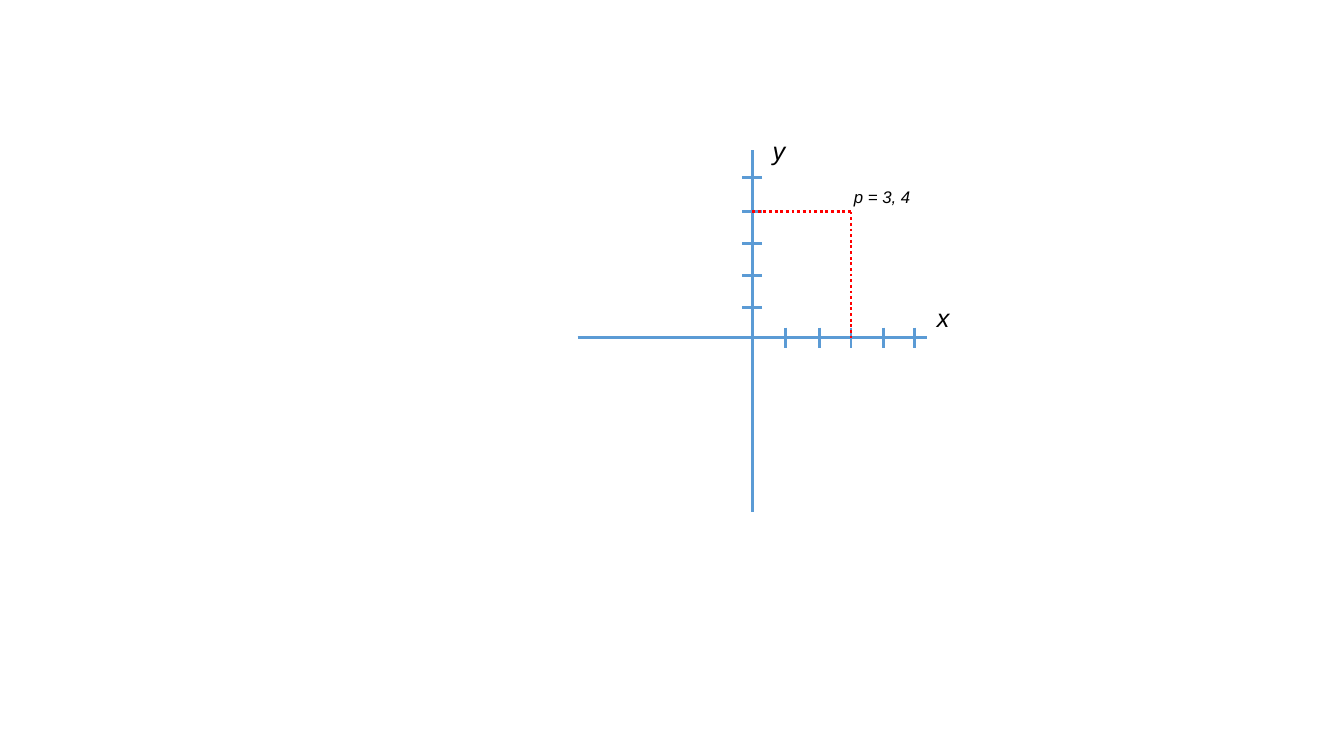
"""Build a slide with coordinate axes and the point p = 3, 4."""
from dataclasses import dataclass

from lxml.etree import SubElement
from pptx import Presentation
from pptx.dml.color import RGBColor
from pptx.enum.dml import MSO_LINE
from pptx.enum.shapes import MSO_CONNECTOR
from pptx.enum.text import MSO_AUTO_SIZE, PP_ALIGN
from pptx.oxml.ns import qn
from pptx.util import Inches, Pt


@dataclass(frozen=True)
class Theme:
    axis: RGBColor = RGBColor(0x5B, 0x9B, 0xD5)
    guide: RGBColor = RGBColor(0xFF, 0x00, 0x00)
    text: RGBColor = RGBColor(0x00, 0x00, 0x00)
    font: str = "Arial"
    axis_size: Pt = Pt(18)
    point_size: Pt = Pt(12)
    line_width: Pt = Pt(2)


theme = Theme()
presentation = Presentation()
presentation.slide_width = Inches(13.33)
presentation.slide_height = Inches(7.5)
slide = presentation.slides.add_slide(presentation.slide_layouts[6])


def add_line(x1, y1, x2, y2, color=theme.axis, dash=None):
    connector = slide.shapes.add_connector(
        MSO_CONNECTOR.STRAIGHT, Inches(x1), Inches(y1), Inches(x2), Inches(y2))
    connector.line.color.rgb = color
    connector.line.width = theme.line_width
    if dash is not None:
        connector.line.dash_style = dash
    SubElement(connector._element.spPr, qn("a:effectLst"))


def add_label(text, left, top, width, height, size, alignment):
    box = slide.shapes.add_textbox(
        Inches(left), Inches(top), Inches(width), Inches(height))
    frame = box.text_frame
    frame.word_wrap = False
    frame.auto_size = MSO_AUTO_SIZE.SHAPE_TO_FIT_TEXT
    paragraph = frame.paragraphs[0]
    paragraph.alignment = alignment
    run = paragraph.add_run()
    run.text = text
    run.font.name = theme.font
    run.font.size = size
    run.font.italic = True
    run.font.color.rgb = theme.text


origin_x, origin_y = 7.46, 3.35
half_tick = 0.1
x_ticks = [7.79, 8.13, 8.44, 8.76, 9.07]
y_ticks = [3.05, 2.73, 2.42, 2.1, 1.76]
point_x, point_y = x_ticks[3 - 1], y_ticks[4 - 1]

add_line(origin_x, 1.49, origin_x, 5.08)
add_line(5.73, origin_y, 9.19, origin_y)
add_label("y", 7.56, 1.29, 0.33, 0.4, theme.axis_size, PP_ALIGN.CENTER)
add_label("x", 9.19, 2.95, 0.33, 0.4, theme.axis_size, PP_ALIGN.CENTER)

for x in x_ticks:
    add_line(x, origin_y - half_tick, x, origin_y + half_tick)
for y in reversed(y_ticks):
    add_line(origin_x + half_tick, y, origin_x - half_tick, y)

add_line(point_x, point_y, point_x, origin_y, theme.guide, MSO_LINE.ROUND_DOT)
add_line(origin_x, point_y, point_x, point_y, theme.guide, MSO_LINE.ROUND_DOT)
add_label("p = 3, 4", 8.37, 1.8, 0.78, 0.3, theme.point_size, PP_ALIGN.LEFT)

presentation.save("out.pptx")
